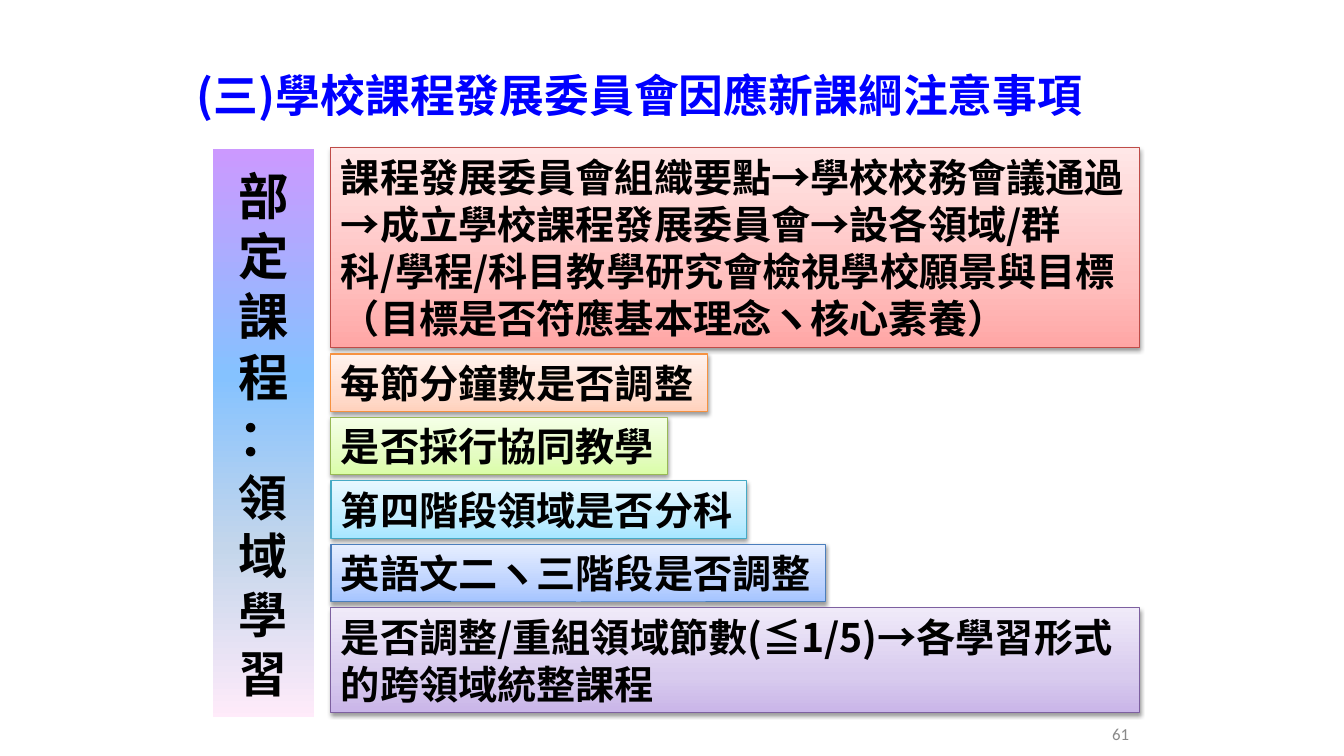
from lxml import etree
from pptx import Presentation
from pptx.dml.color import RGBColor
from pptx.enum.shapes import MSO_SHAPE
from pptx.enum.text import MSO_ANCHOR, MSO_AUTO_SIZE, PP_ALIGN
from pptx.oxml import parse_xml
from pptx.oxml.ns import nsdecls, qn
from pptx.util import Emu, Pt

HEADING = "(三)學校課程發展委員會因應新課綱注意事項"
PAGE_NUMBER = "61"
COLUMN = [("部定課程\v：", 36), ("領域", 35), ("學習", 35)]
COLUMN_STOPS = [(0, "CC99FF"), (40, "85C2FF"), (70, "C4D6EB"), (100, "FFEBFA")]
FIRST_ITEM = (
    "課程發展委員會組織要點→學校校務會議通過→成立學校課程發展委員會→設各領域/群科/學程/"
    "科目教學研究會檢視學校願景與目標（目標是否符應基本理念ヽ核心素養）",
    ("FFA6A5", "FFC0BF", "FFE7E7"), "BF4C48")
SHORT_ITEMS = [
    ("每節分鐘數是否調整", 377, ("FFD2BD", "FFDED0", "FFF2ED"), "F69240"),
    ("是否採行協同教學", 337, ("DAFDA7", "E4FCC2", "F5FFE7"), "98B955"),
    ("第四階段領域是否分科", 416, ("A7E6FF", "C1EDFF", "E7F8FF"), "46AAC5"),
    ("英語文二ヽ三階段是否調整", 495, ("A4C4FF", "BFD4FF", "E6EEFF"), "4B7EBC"),
]
LAST_ITEM = (
    "是否調整/重組領域節數(≦1/5)→各學習形式的跨領域統整課程",
    ("C9B5E8", "D8CBEE", "F0EAF9"), "7D60A0")

PX = 914400 / 100.8
CJK = "Noto Sans CJK SC"
ITEM_LEFT, ITEM_WIDTH, GAP = 331, 809, 6
FIRST_TOP, FIRST_HEIGHT = 148, 200
LAST_TOP, LAST_HEIGHT = 608, 105


def px(value):
    return Emu(round(value * PX))


def color(value):
    return RGBColor.from_string(value)


def write(frame, paragraphs, font=CJK, ink="000000", bold=True,
          align=PP_ALIGN.LEFT, anchor=MSO_ANCHOR.TOP, wrap=True):
    frame.word_wrap = wrap
    frame.vertical_anchor = anchor
    for index, (text, size) in enumerate(paragraphs):
        paragraph = frame.add_paragraph() if index else frame.paragraphs[0]
        paragraph.text = text
        paragraph.alignment = align
        for run in paragraph.runs:
            run.font.name = font
            run.font.size = Pt(size)
            run.font.bold = bold
            run.font.color.rgb = color(ink)
            latin = run.font._element.find(qn("a:latin"))
            east_asian = etree.Element(qn("a:ea"), typeface=font)
            latin.addnext(east_asian)


def add_label(slide, box, paragraphs, **style):
    label = slide.shapes.add_textbox(*map(px, box))
    write(label.text_frame, paragraphs, anchor=MSO_ANCHOR.MIDDLE, **style)


def add_panel(slide, box, stops, angle, edge, edge_width):
    panel = slide.shapes.add_shape(MSO_SHAPE.RECTANGLE, *map(px, box))
    panel.shadow.inherit = False
    panel.line.color.rgb = color(edge)
    panel.line.width = Pt(edge_width)
    stop_xml = "".join(
        f'<a:gs pos="{place * 1000}"><a:srgbClr val="{tint}"/></a:gs>'
        for place, tint in stops)
    gradient = parse_xml(
        f'<a:gradFill {nsdecls("a")} rotWithShape="1"><a:gsLst>{stop_xml}</a:gsLst>'
        f'<a:lin ang="{angle * 60000}" scaled="0"/></a:gradFill>')
    panel._element.spPr.find(qn("a:prstGeom")).addnext(gradient)
    return panel


def add_item(slide, top, width, height, text, tints, edge, wrap=True):
    item = add_panel(slide, (ITEM_LEFT, top, width, height),
                     list(zip((0, 35, 100), tints)), 270, edge, 0.75)
    effects = item._element.spPr.find(qn("a:effectLst"))
    effects.append(parse_xml(
        f'<a:outerShdw {nsdecls("a")} blurRad="{Pt(3.1)}" dist="{Pt(1.6)}" '
        'dir="5400000" rotWithShape="0"><a:srgbClr val="000000">'
        '<a:alpha val="38000"/></a:srgbClr></a:outerShdw>'))
    write(item.text_frame, [(text, 28)], wrap=wrap)
    item.text_frame.auto_size = MSO_AUTO_SIZE.SHAPE_TO_FIT_TEXT


def main():
    deck = Presentation()
    deck.slide_width, deck.slide_height = px(1344), px(756)
    slide = deck.slides.add_slide(deck.slide_layouts[6])

    add_label(slide, (187, 52, 988, 86), [(HEADING, 32)], ink="0000FF")
    add_label(slide, (904, 714, 235, 40), [(PAGE_NUMBER, 12)], font="Calibri",
              ink="898989", bold=False, align=PP_ALIGN.RIGHT)

    column = add_panel(slide, (212, 148, 103, 571), COLUMN_STOPS, 90, "FFFFFF", 2)
    write(column.text_frame, COLUMN, align=PP_ALIGN.CENTER, anchor=MSO_ANCHOR.MIDDLE)

    add_item(slide, FIRST_TOP, ITEM_WIDTH, FIRST_HEIGHT, *FIRST_ITEM)
    short_top = FIRST_TOP + FIRST_HEIGHT + GAP
    pitch = (LAST_TOP - short_top) / len(SHORT_ITEMS)
    for row, (text, width, tints, edge) in enumerate(SHORT_ITEMS):
        add_item(slide, short_top + row * pitch, width, pitch - GAP,
                 text, tints, edge, wrap=False)
    add_item(slide, LAST_TOP, ITEM_WIDTH, LAST_HEIGHT, *LAST_ITEM)

    deck.save("out.pptx")


if __name__ == "__main__":
    main()
